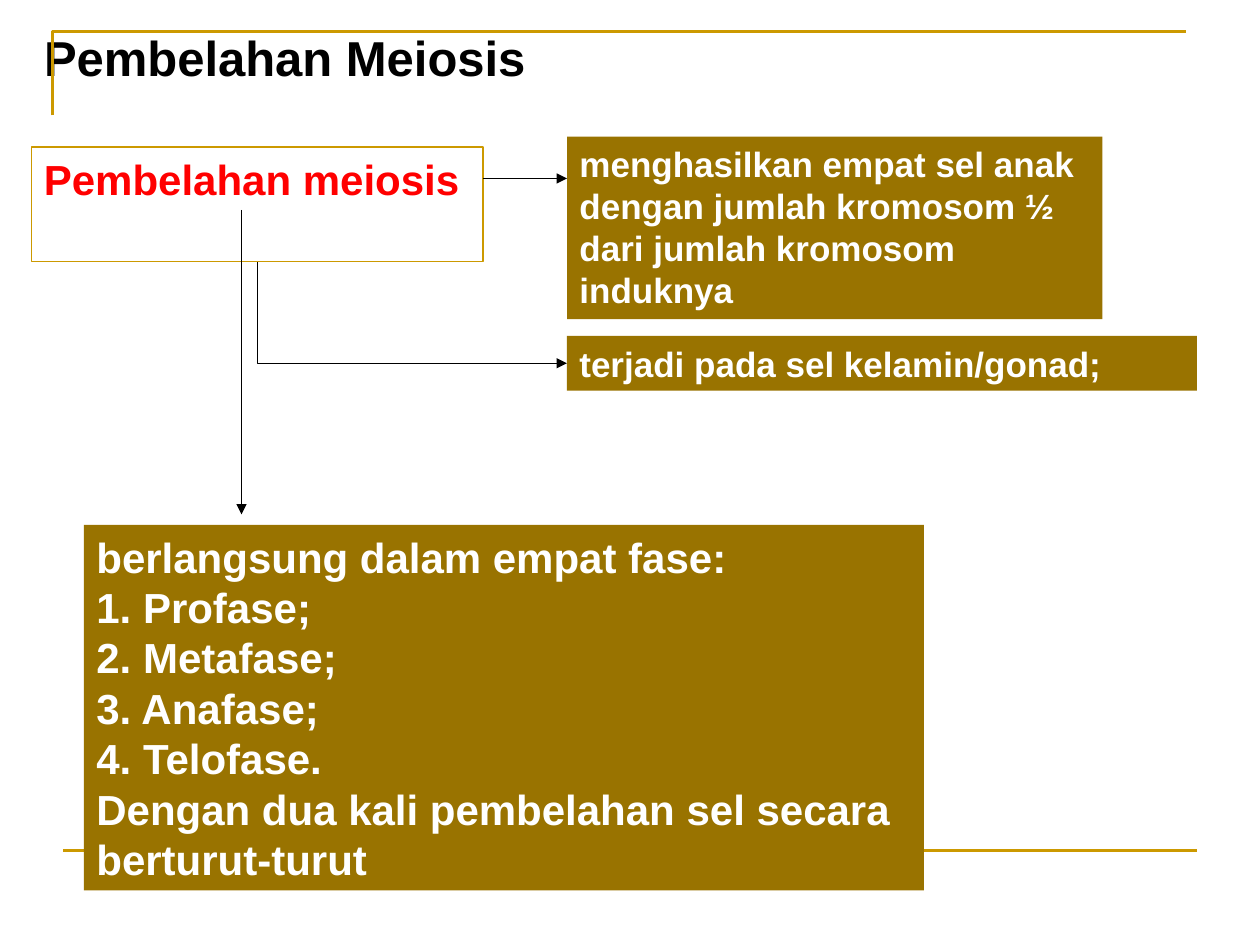
import lxml.etree
import pptx
import pptx.dml.color
import pptx.enum.shapes
import pptx.enum.text
import pptx.oxml.ns
import pptx.util

UNIT = pptx.util.Inches(1) / 12
BLACK, WHITE, RED = "000000", "FFFFFF", "FF0000"
GOLD, BROWN = "CC9900", "997300"


def rgb(color):
    return pptx.dml.color.RGBColor.from_string(color)


def grid(*cells):
    return [pptx.util.Emu(round(c * UNIT)) for c in cells]


class Deck:
    """Draws styled elements on a slide grid of 120 columns by 90 rows."""

    font = "Arial"

    def __init__(self):
        self.prs = pptx.Presentation()
        self.prs.slide_width, self.prs.slide_height = grid(120, 90)

    def add_slide(self):
        self.s = self.prs.slides.add_slide(self.prs.slide_layouts[5])

    def set_text(self, sp, lines, size, color):
        tf = sp.text_frame
        tf.word_wrap = True
        tf.auto_size = pptx.enum.text.MSO_AUTO_SIZE.NONE
        tf.vertical_anchor = pptx.enum.text.MSO_ANCHOR.TOP
        tf.text = "\n".join(lines)
        for p in tf.paragraphs:
            p.alignment = pptx.enum.text.PP_ALIGN.LEFT
            p.font.name, p.font.bold = self.font, True
            p.font.size = pptx.util.Pt(size)
            p.font.color.rgb = rgb(color)

    def title(self, text, box):
        sp = self.s.shapes.title
        sp.left, sp.top, sp.width, sp.height = grid(*box)
        self.set_text(sp, [text], 28, BLACK)

    def box(self, lines, box, size, color=WHITE, fill=None, line=None):
        sp = self.s.shapes.add_shape(
            pptx.enum.shapes.MSO_SHAPE.RECTANGLE, *grid(*box))
        sp.shadow.inherit = False
        if fill:
            sp.fill.solid()
            sp.fill.fore_color.rgb = rgb(fill)
        else:
            sp.fill.background()
        if line:
            self.stroke(sp, line, 0.75)
        else:
            sp.line.fill.background()
        self.set_text(sp, lines, size, color)

    def stroke(self, sp, color, width):
        sp.line.color.rgb = rgb(color)
        sp.line.width = pptx.util.Pt(width)

    def corner(self, start, *points):
        builder = self.s.shapes.build_freeform(*grid(*start), scale=1.0)
        builder.add_line_segments([grid(*pt) for pt in points], close=False)
        sp = builder.convert_to_shape()
        sp.shadow.inherit = False
        sp.fill.background()
        self.stroke(sp, GOLD, 1.5)

    def line(self, start, end, color=GOLD, width=1.5):
        sp = self.s.shapes.add_connector(
            pptx.enum.shapes.MSO_CONNECTOR.STRAIGHT, *grid(*start, *end))
        self.stroke(sp, color, width)
        lxml.etree.SubElement(
            sp._element.spPr, pptx.oxml.ns.qn("a:effectLst"))
        return sp

    def arrow(self, start, end):
        sp = self.line(start, end, BLACK, 0.75)
        lxml.etree.SubElement(
            sp.get_or_add_ln(), pptx.oxml.ns.qn("a:tailEnd"), type="triangle")
        return sp

    def elbow_arrow(self, start, end):
        (x1, y1), (x2, y2) = start, end
        cx, cy = (x1 + x2) / 2, (y1 + y2) / 2
        dx, dy = (y2 - y1) / 2, (x2 - x1) / 2
        sp = self.arrow((cx - dx, cy - dy), (cx + dx, cy + dy))
        spPr = sp._element.spPr
        spPr.find(pptx.oxml.ns.qn("a:prstGeom")).set("prst", "bentConnector2")
        xfrm = spPr.find(pptx.oxml.ns.qn("a:xfrm"))
        xfrm.set("rot", "16200000")
        xfrm.set("flipH", "1")


def main():
    deck = Deck()
    deck.add_slide()
    deck.title("Pembelahan Meiosis", (3, 2, 117, 6.9))
    deck.corner((5, 11), (5, 3), (113, 3))
    deck.line((6, 81), (114, 81))
    deck.box(["berlangsung dalam empat fase:", "1. Profase;", "2. Metafase;",
              "3. Anafase;", "4. Telofase.",
              "Dengan dua kali pembelahan sel secara berturut-turut"],
             (8, 50, 80, 34.8), 24, fill=BROWN)
    deck.box(["menghasilkan empat sel anak dengan jumlah kromosom ½ "
              "dari jumlah kromosom induknya"],
             (54, 13, 51, 17.4), 20, fill=BROWN)
    deck.box(["terjadi pada sel kelamin/gonad;"],
             (54, 32, 60, 5.2), 20, fill=BROWN)
    deck.box(["Pembelahan meiosis"], (3, 14, 43, 10.9), 24, RED, line=GOLD)
    deck.arrow((23, 20), (23, 49))
    deck.arrow((46, 17), (54, 17))
    deck.elbow_arrow((24.5, 25), (54, 34.6))
    deck.prs.save("out.pptx")


if __name__ == "__main__":
    main()
